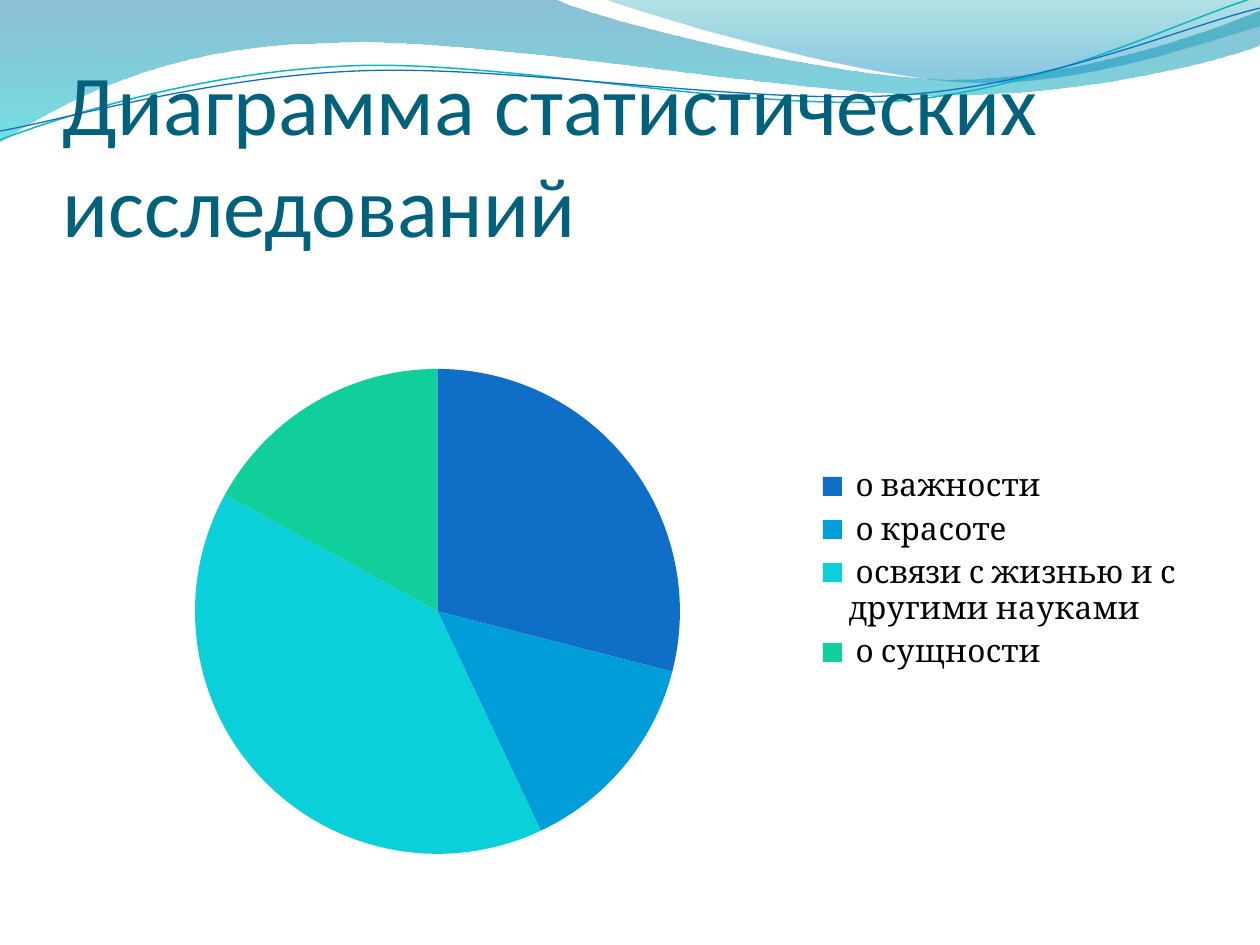
from dataclasses import dataclass
from math import cos, radians, sin
from typing import NamedTuple

from lxml.etree import SubElement
from pptx import Presentation
from pptx.chart.data import CategoryChartData
from pptx.dml.color import RGBColor
from pptx.enum.chart import XL_CHART_TYPE, XL_LEGEND_POSITION
from pptx.enum.text import MSO_ANCHOR
from pptx.oxml.ns import qn
from pptx.util import Emu, Pt

EMU_PER_PX = 914400 / 126
RIBBON_TILT = -2.7


@dataclass(frozen=True)
class Theme:
    title_color: str = "04617B"
    title_font: str = "Calibri"
    title_size: float = 48.6
    chart_color: str = "000000"
    chart_font: str = "Cambria"
    chart_size: float = 18
    slices: tuple = ("0F6FC6", "009DD9", "0BD0D9", "10CF9B")
    ribbon_teal: str = "0AB8BF"
    ribbon_blue: str = "0F6FC6"


class Box(NamedTuple):
    left: int
    top: int
    width: int
    height: int


class Stop(NamedTuple):
    position: float
    color: str
    opacity: int


class Wave(NamedTuple):
    """Each step holds one point (a line) or three (a cubic curve)."""
    start: tuple
    steps: tuple
    stops: tuple


class Ribbon(NamedTuple):
    start: tuple
    steps: tuple
    center: tuple
    color: str
    width: float


THEME = Theme()
PAGE = Box(0, 0, 1260, 945)
TITLE = Box(63, 97, 1134, 158)
CHART = Box(63, 267, 1134, 605)
PIE = Box(195, 369, 485, 485)
SHARES = {
    " о важности": -29,
    " о красоте": 14,
    " освязи с жизнью и с другими науками": 40,
    " о сущности": 17,
}
WAVES = (
    Wave((0, 0), (
        ((554, -1),),
        ((600, 21), (837, 79), (955, 79)),
        ((1075, 79), (1207, 33), (1260, 11)),
        ((1261, 45),),
        ((1239, 55), (1096, 96), (940, 95)),
        ((784, 95), (481, 35), (324, 43)),
        ((163, 45), (58, 105), (-1, 142)),
    ), (Stop(0, "0074A1", 45), Stop(1, "00C6CF", 55))),
    Wave((604, -1), (
        ((641, 14), (859, 78), (969, 82)),
        ((1079, 87), (1211, 40), (1260, 26)),
        ((1260, 0),),
    ), (Stop(0, "00A1A9", 30), Stop(0.8, "008BBF", 45))),
)
RIBBONS = (
    Ribbon((0, 140), (
        ((60, 117), (199, 72), (349, 66)),
        ((498, 59), (747, 112), (898, 101)),
        ((1050, 89), (1182, 19), (1257, -3)),
    ), (629, 72), THEME.ribbon_teal, 0.85),
    Ribbon((0, 131), (
        ((59, 121), (207, 77), (357, 71)),
        ((508, 64), (752, 106), (903, 95)),
        ((1053, 84), (1185, 26), (1260, 8)),
    ), (629, 74), THEME.ribbon_blue, 0.75),
)


def px(value: float) -> Emu:
    return Emu(round(value * EMU_PER_PX))


def place(box: Box) -> tuple:
    return tuple(px(side) for side in box)


def rgb(color: str) -> RGBColor:
    return RGBColor.from_string(color)


def set_font(font, color: str, name: str, size: float) -> None:
    for key, value in {"name": name, "size": Pt(size), "bold": False}.items():
        setattr(font, key, value)
    font.color.rgb = rgb(color)


def turn(point: tuple, center: tuple, degrees: float) -> tuple:
    angle = radians(degrees)
    dx, dy = point[0] - center[0], point[1] - center[1]
    return (center[0] + dx * cos(angle) - dy * sin(angle),
            center[1] + dx * sin(angle) + dy * cos(angle))


def add_outline(page, start: tuple, steps: tuple, close: bool):
    """Build a freeform through all points, then merge triples into curves."""
    builder = page.shapes.build_freeform(px(start[0]), px(start[1]), scale=1.0)
    builder.add_line_segments(
        [(px(x), px(y)) for step in steps for x, y in step], close=close)
    shape = builder.convert_to_shape()
    shape.shadow.inherit = False
    lines = iter(list(shape._element.iter(qn("a:lnTo"))))
    for step in steps:
        first, *others = [next(lines) for _ in step]
        if others:
            first.tag = qn("a:cubicBezTo")
        for line in others:
            first.append(line[0])
            line.getparent().remove(line)
    return shape


def add_wave(page, wave: Wave) -> None:
    shape = add_outline(page, wave.start, wave.steps, close=True)
    shape.line.fill.background()
    shape.fill.gradient()
    shape.fill.gradient_angle = 270
    for target, stop in zip(shape.fill.gradient_stops, wave.stops):
        target.position = stop.position
        target.color.rgb = rgb(stop.color)
    gradient = shape._element.spPr.find(qn("a:gradFill"))
    for color, stop in zip(gradient.iter(qn("a:srgbClr")), wave.stops):
        SubElement(color, qn("a:alpha"), val=str(stop.opacity * 1000))


def add_ribbon(page, ribbon: Ribbon) -> None:
    """Lay the ribbon out level, then tilt the shape into place."""
    start = turn(ribbon.start, ribbon.center, -RIBBON_TILT)
    steps = tuple(tuple(turn(point, ribbon.center, -RIBBON_TILT) for point in step)
                  for step in ribbon.steps)
    shape = add_outline(page, start, steps, close=False)
    shape.rotation = RIBBON_TILT
    shape.fill.background()
    shape.line.color.rgb = rgb(ribbon.color)
    shape.line.width = Pt(ribbon.width)


def add_title(page, text: str) -> None:
    frame = page.shapes.add_textbox(*place(TITLE)).text_frame
    layout = {"word_wrap": True, "vertical_anchor": MSO_ANCHOR.BOTTOM,
              "margin_left": 0, "margin_right": 0, "margin_top": px(6), "margin_bottom": 0}
    for key, value in layout.items():
        setattr(frame, key, value)
    span = frame.paragraphs[0].add_run()
    span.text = text
    set_font(span.font, THEME.title_color, THEME.title_font, THEME.title_size)


def fix_plot_area(chart, plot: Box) -> None:
    area = chart._chartSpace.chart.plotArea
    layout = area.find(qn("c:layout"))
    if layout is None:
        layout = area.makeelement(qn("c:layout"))
        area.insert(0, layout)
    manual = SubElement(layout, qn("c:manualLayout"))
    values = {
        "layoutTarget": "inner", "xMode": "edge", "yMode": "edge",
        "x": (plot.left - CHART.left) / CHART.width,
        "y": (plot.top - CHART.top) / CHART.height,
        "w": plot.width / CHART.width,
        "h": plot.height / CHART.height,
    }
    for tag, value in values.items():
        SubElement(manual, qn(f"c:{tag}"), val=str(value))


def add_pie(page) -> None:
    data = CategoryChartData()
    data.categories = list(SHARES)
    data.add_series("Series 1", list(SHARES.values()))
    chart = page.shapes.add_chart(XL_CHART_TYPE.PIE, *place(CHART), data).chart
    set_font(chart.font, THEME.chart_color, THEME.chart_font, THEME.chart_size)
    chart.has_title = False
    chart.has_legend = True
    chart.legend.position = XL_LEGEND_POSITION.RIGHT
    chart.legend.include_in_layout = False
    plot = chart.plots[0]
    plot.vary_by_categories = True
    for index, color in enumerate(THEME.slices):
        fill = plot.series[0].points[index].format.fill
        fill.solid()
        fill.fore_color.rgb = rgb(color)
    fix_plot_area(chart, PIE)


def main() -> None:
    deck = Presentation()
    deck.slide_width, deck.slide_height = px(PAGE.width), px(PAGE.height)
    page = deck.slides.add_slide(deck.slide_layouts[6])
    for wave in WAVES:
        add_wave(page, wave)
    for ribbon in RIBBONS:
        add_ribbon(page, ribbon)
    add_title(page, "Диаграмма статистических исследований")
    add_pie(page)
    deck.save("out.pptx")


if __name__ == "__main__":
    main()
